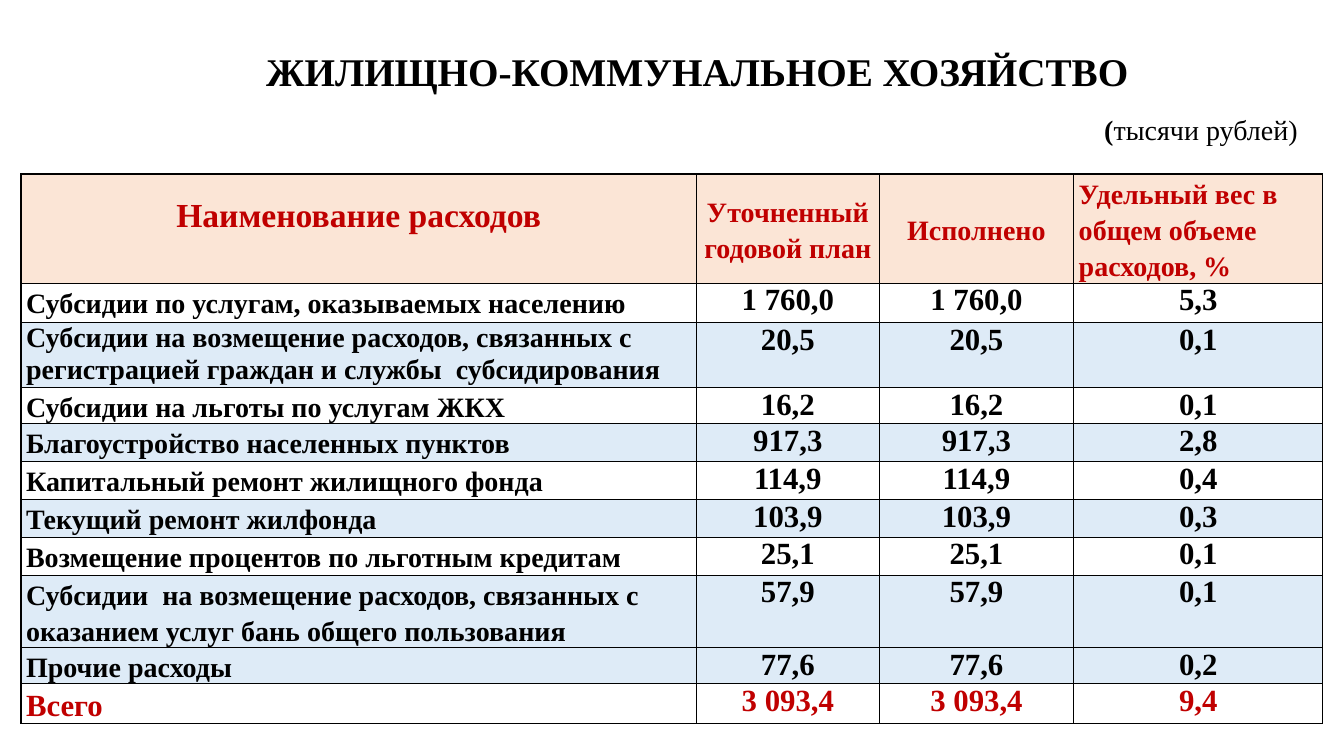
from dataclasses import dataclass

from lxml.etree import SubElement
from pptx import Presentation
from pptx.dml.color import RGBColor
from pptx.enum.text import MSO_ANCHOR, PP_ALIGN
from pptx.oxml.ns import qn
from pptx.slide import Slide
from pptx.table import Table, _Cell
from pptx.text.text import TextFrame
from pptx.util import Pt

FONT = "Times New Roman"
BLACK, RED = "000000", "C00000"
PEACH, WHITE, PALE_BLUE = "FBE5D6", "FFFFFF", "DEEBF7"
COLUMN_WIDTHS = [482.5, 130.5, 139, 178]
LINE_HEIGHT = 1.12
WIDE_SPACING = 1.15


@dataclass
class Span:
    text: str
    size: float
    color: str = BLACK
    bold: bool = True


@dataclass
class Caption:
    left: float
    top: float
    width: float
    height: float
    align: PP_ALIGN
    spans: list[Span]


@dataclass
class Heading:
    text: str
    size: float
    align: PP_ALIGN
    anchor: MSO_ANCHOR
    top_margin: float = 0


@dataclass
class Expense:
    name: str
    values: list[str]
    height: float
    fill: str
    color: str = BLACK
    name_size: float = 20
    line_spacing: float = WIDE_SPACING


CAPTIONS = [
    Caption(98, 30.6, 800, 42, PP_ALIGN.CENTER,
            [Span("ЖИЛИЩНО-КОММУНАЛЬНОЕ ХОЗЯЙСТВО", 28)]),
    Caption(727, 78.3, 200, 30, PP_ALIGN.RIGHT,
            [Span("(", 20), Span("тысячи рублей)", 20, bold=False)]),
]

HEADINGS = [
    Heading("Наименование расходов", 24, PP_ALIGN.CENTER, MSO_ANCHOR.TOP, 12.5),
    Heading("Уточненный годовой план", 20, PP_ALIGN.CENTER, MSO_ANCHOR.MIDDLE),
    Heading("Исполнено", 20, PP_ALIGN.CENTER, MSO_ANCHOR.MIDDLE),
    Heading("Удельный вес в общем объеме расходов, %", 20, PP_ALIGN.LEFT, MSO_ANCHOR.TOP),
]
HEADING_HEIGHT = 78

EXPENSES = [
    Expense("Субсидии по услугам, оказываемых населению",
            ["1 760,0", "1 760,0", "5,3"], 28, WHITE),
    Expense("Субсидии на возмещение расходов, связанных с регистрацией граждан "
            "и службы  субсидирования",
            ["20,5", "20,5", "0,1"], 46.4, PALE_BLUE, line_spacing=1),
    Expense("Субсидии на льготы по услугам ЖКХ", ["16,2", "16,2", "0,1"], 25.8, WHITE),
    Expense("Благоустройство населенных пунктов", ["917,3", "917,3", "2,8"], 27.1, PALE_BLUE),
    Expense("Капитальный ремонт жилищного фонда", ["114,9", "114,9", "0,4"], 27.1, WHITE),
    Expense("Текущий ремонт жилфонда", ["103,9", "103,9", "0,3"], 27.1, PALE_BLUE),
    Expense("Возмещение процентов по льготным кредитам",
            ["25,1", "25,1", "0,1"], 27.1, WHITE),
    Expense("Субсидии  на возмещение расходов, связанных с оказанием услуг бань "
            "общего пользования",
            ["57,9", "57,9", "0,1"], 51.5, PALE_BLUE),
    Expense("Прочие расходы", ["77,6", "77,6", "0,2"], 25.8, PALE_BLUE),
    Expense("Всего", ["3 093,4", "3 093,4", "9,4"], 28.4, WHITE, RED, 22),
]


def rgb(color: str) -> RGBColor:
    return RGBColor.from_string(color)


def write_spans(frame: TextFrame, spans: list[Span], align: PP_ALIGN,
                line_spacing: float = 1) -> None:
    frame.word_wrap = True
    para = frame.paragraphs[0]
    para.alignment = align
    para.line_spacing = Pt(round(spans[0].size * LINE_HEIGHT * line_spacing, 1))
    for span in spans:
        run = para.add_run()
        run.text = span.text
        run.font.name = FONT
        run.font.size = Pt(span.size)
        run.font.bold = span.bold
        run.font.color.rgb = rgb(span.color)


def draw_caption(page: Slide, caption: Caption) -> None:
    box = page.shapes.add_textbox(Pt(caption.left), Pt(caption.top),
                                  Pt(caption.width), Pt(caption.height))
    frame = box.text_frame
    frame.margin_left = frame.margin_right = 0
    frame.margin_top = frame.margin_bottom = 0
    frame.vertical_anchor = MSO_ANCHOR.MIDDLE
    write_spans(frame, caption.spans, caption.align)


def style_cell(cell: _Cell, fill: str) -> None:
    cell.margin_left = cell.margin_right = Pt(3.6)
    cell.margin_top = cell.margin_bottom = 0
    properties = cell._tc.get_or_add_tcPr()
    for side in ("lnL", "lnR", "lnT", "lnB"):
        line = SubElement(properties, qn(f"a:{side}"), w=str(Pt(1)))
        solid = SubElement(line, qn("a:solidFill"))
        SubElement(solid, qn("a:srgbClr"), val=BLACK)
    cell.fill.solid()
    cell.fill.fore_color.rgb = rgb(fill)


def fill_headings(table: Table) -> None:
    table.rows[0].height = Pt(HEADING_HEIGHT)
    for column, heading in enumerate(HEADINGS):
        cell = table.cell(0, column)
        style_cell(cell, PEACH)
        cell.margin_top = Pt(heading.top_margin)
        cell.vertical_anchor = heading.anchor
        write_spans(cell.text_frame, [Span(heading.text, heading.size, RED)],
                    heading.align, WIDE_SPACING)


def fill_expense(table: Table, row: int, expense: Expense) -> None:
    table.rows[row].height = Pt(expense.height)
    for column, text in enumerate([expense.name, *expense.values]):
        cell = table.cell(row, column)
        style_cell(cell, expense.fill)
        if column == 0:
            write_spans(cell.text_frame, [Span(text, expense.name_size, expense.color)],
                        PP_ALIGN.LEFT, expense.line_spacing)
        else:
            write_spans(cell.text_frame, [Span(text, 22, expense.color)], PP_ALIGN.CENTER)


def draw_table(page: Slide) -> None:
    height = HEADING_HEIGHT + sum(expense.height for expense in EXPENSES)
    table = page.shapes.add_table(len(EXPENSES) + 1, len(COLUMN_WIDTHS), Pt(15), Pt(124.3),
                                  Pt(sum(COLUMN_WIDTHS)), Pt(height)).table
    table.first_row = table.horz_banding = False
    for column, width in zip(table.columns, COLUMN_WIDTHS):
        column.width = Pt(width)
    fill_headings(table)
    for row, expense in enumerate(EXPENSES, start=1):
        fill_expense(table, row, expense)


def main() -> None:
    deck = Presentation()
    deck.slide_width, deck.slide_height = Pt(960), Pt(540)
    page = deck.slides.add_slide(deck.slide_layouts[6])
    for caption in CAPTIONS:
        draw_caption(page, caption)
    draw_table(page)
    deck.save("out.pptx")


if __name__ == "__main__":
    main()
